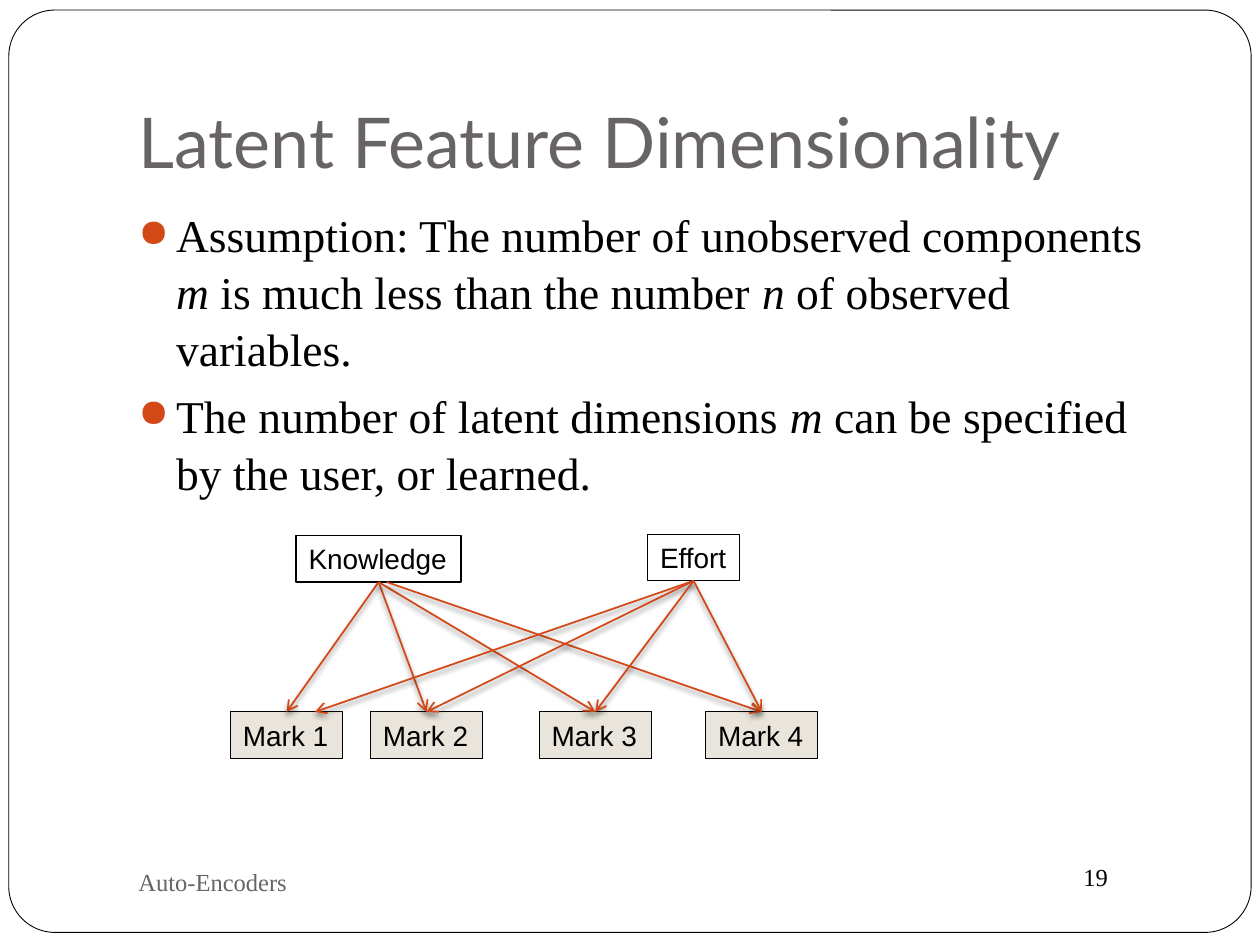
from lxml.etree import SubElement
from pptx import Presentation
from pptx.dml.color import RGBColor
from pptx.enum.shapes import MSO_CONNECTOR, MSO_SHAPE
from pptx.enum.text import MSO_ANCHOR, MSO_AUTO_SIZE, PP_ALIGN
from pptx.oxml import parse_xml
from pptx.oxml.ns import qn
from pptx.util import Inches, Pt

BLACK = RGBColor(0x00, 0x00, 0x00)
WHITE = RGBColor(0xFF, 0xFF, 0xFF)
GRAY = RGBColor(0x69, 0x64, 0x64)
ORANGE = RGBColor(0xD3, 0x48, 0x17)
BEIGE = RGBColor(0xE9, 0xE5, 0xDC)
NAMESPACE = 'xmlns:a="http://schemas.openxmlformats.org/drawingml/2006/main"'
SHADOW = f"""<a:effectLst {NAMESPACE}>
<a:outerShdw blurRad="38100" dist="25400" dir="5400000" rotWithShape="0">
<a:srgbClr val="000000"><a:alpha val="50000"/></a:srgbClr></a:outerShdw></a:effectLst>"""


def add_run(paragraph, text, name, size, color, italic=False):
    run = paragraph.add_run()
    run.text = text
    run.font.color.rgb = color
    for attribute, value in {"name": name, "size": Pt(size), "italic": italic}.items():
        setattr(run.font, attribute, value)


def add_box(preset, left, top, width, height, fill, line_width):
    shape = slide.shapes.add_shape(
        preset, Inches(left), Inches(top), Inches(width), Inches(height)
    )
    shape.shadow.inherit = False
    shape.fill.solid()
    shape.fill.fore_color.rgb = fill
    shape.line.color.rgb = BLACK
    shape.line.width = Pt(line_width)
    return shape


presentation = Presentation()
presentation.slide_width = Inches(10)
presentation.slide_height = Inches(7.5)
slide = presentation.slides.add_slide(presentation.slide_layouts[5])

frame = add_box(MSO_SHAPE.ROUNDED_RECTANGLE, 0.07, 0.08, 9.86, 7.32, WHITE, 0.5)
frame.adjustments[0] = 0.05
slide.shapes._spTree.insert(2, frame._element)

title = slide.shapes.title
for attribute, value in {"left": 1, "top": 0.3, "width": 8.5, "height": 1.25}.items():
    setattr(title, attribute, Inches(value))
title_format = {
    "vertical_anchor": MSO_ANCHOR.BOTTOM,
    "auto_size": MSO_AUTO_SIZE.NONE,
    "margin_bottom": Inches(0.1),
}
for attribute, value in title_format.items():
    setattr(title.text_frame, attribute, value)
paragraph = title.text_frame.paragraphs[0]
paragraph.alignment = PP_ALIGN.LEFT
add_run(paragraph, "Latent Feature Dimensionality", "Lato", 40, GRAY)

body = slide.shapes.add_textbox(Inches(1), Inches(1.58), Inches(8.5), Inches(2.21))
body.text_frame.word_wrap = True
bullets = [
    [
        ("Assumption: The number of unobserved components ", False),
        ("m", True),
        (" is much less than the number ", False),
        ("n", True),
        (" of observed variables.", False),
    ],
    [
        ("The number of latent dimensions ", False),
        ("m", True),
        (" can be specified by the user, or learned.", False),
    ],
]
for index, runs in enumerate(bullets):
    paragraph = body.text_frame.add_paragraph() if index else body.text_frame.paragraphs[0]
    paragraph.space_before = Pt(5.8)
    paragraph.line_spacing = 1.04
    properties = paragraph._p.get_or_add_pPr()
    properties.set("marL", str(Inches(0.3)))
    properties.set("indent", str(Inches(-0.3)))
    bullet_color = SubElement(properties, qn("a:buClr"))
    SubElement(bullet_color, qn("a:srgbClr"), val=str(ORANGE))
    SubElement(properties, qn("a:buSzPct"), val="85000")
    SubElement(properties, qn("a:buChar"), char="●")
    for text, italic in runs:
        add_run(paragraph, text, "Times New Roman", 26, BLACK, italic)

small_texts = [
    ("Auto-Encoders", 1, 6.75, 4.33, 0.5, GRAY, MSO_ANCHOR.MIDDLE),
    ("19", 8.5, 6.79, 1, 0.34, BLACK, MSO_ANCHOR.TOP),
]
for text, left, top, width, height, color, anchor in small_texts:
    box = slide.shapes.add_textbox(Inches(left), Inches(top), Inches(width), Inches(height))
    box.text_frame.word_wrap = True
    box.text_frame.vertical_anchor = anchor
    add_run(box.text_frame.paragraphs[0], text, "Times New Roman", 14, color)

nodes = {}
node_data = [
    ("Mark 1", 1.83, 5.65, 0.89, BEIGE),
    ("Mark 2", 2.94, 5.65, 0.89, BEIGE),
    ("Mark 3", 4.28, 5.65, 0.89, BEIGE),
    ("Mark 4", 5.6, 5.65, 0.89, BEIGE),
    ("Knowledge", 2.35, 4.25, 1.31, WHITE),
    ("Effort", 5.14, 4.24, 0.73, WHITE),
]
for name, left, top, width, fill in node_data:
    node = add_box(MSO_SHAPE.RECTANGLE, left, top, width, 0.37, fill, 0.75)
    node.text_frame.word_wrap = False
    node.text_frame.vertical_anchor = MSO_ANCHOR.TOP
    paragraph = node.text_frame.paragraphs[0]
    paragraph.alignment = PP_ALIGN.LEFT
    add_run(paragraph, name, "Arial", 16, BLACK)
    nodes[name] = node

free_starts = {("Knowledge", "Mark 4"): 3.07}
free_ends = {("Effort", "Mark 1"): 2.5}
for factor in ("Knowledge", "Effort"):
    for mark in ("Mark 1", "Mark 2", "Mark 3", "Mark 4"):
        pair = (factor, mark)
        source, target = nodes[factor], nodes[mark]
        arrow = slide.shapes.add_connector(
            MSO_CONNECTOR.STRAIGHT,
            Inches(free_starts.get(pair, 0)),
            source.top + source.height,
            Inches(free_ends.get(pair, 0)),
            target.top,
        )
        if pair not in free_starts:
            arrow.begin_connect(source, 2)
        if pair not in free_ends:
            arrow.end_connect(target, 0)
        arrow.line.color.rgb = ORANGE
        arrow.line.width = Pt(1)
        SubElement(arrow.line._get_or_add_ln(), qn("a:tailEnd"), type="arrow")
        arrow._element.spPr.append(parse_xml(SHADOW))

presentation.save("out.pptx")
